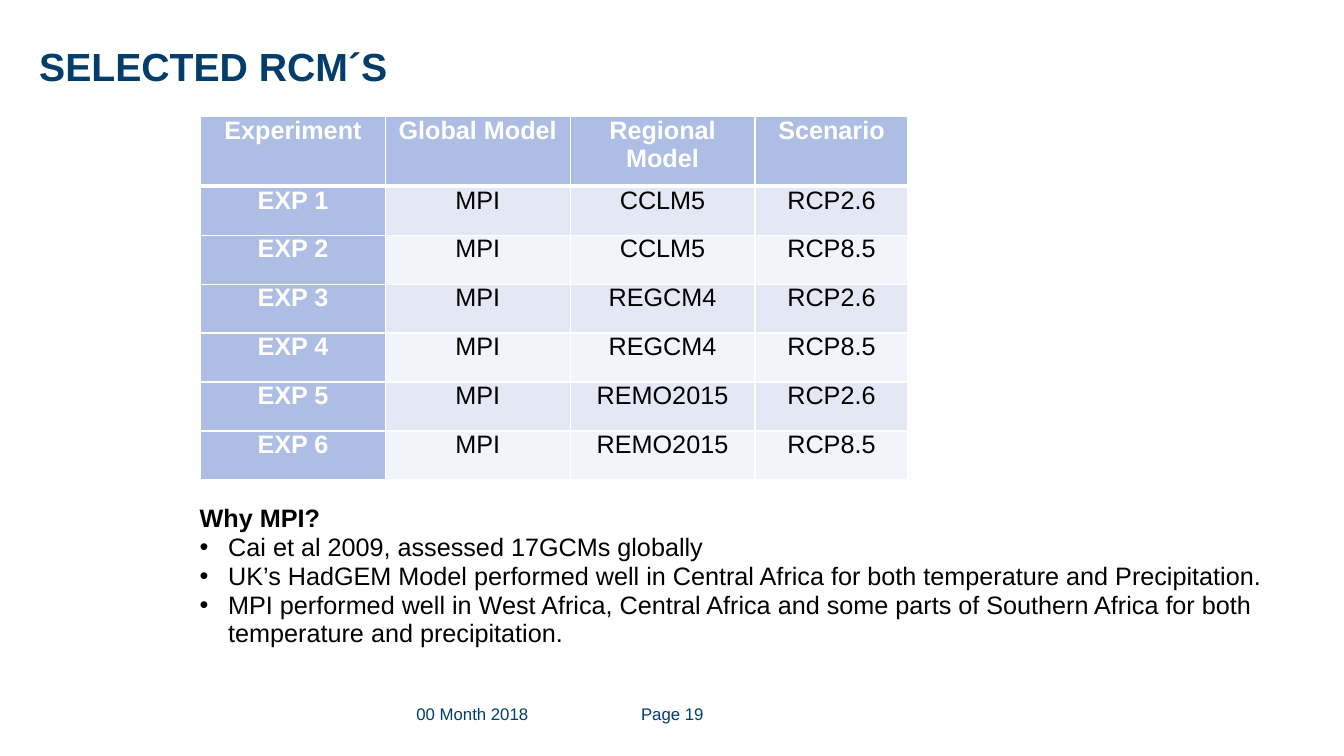
"""Build the slide of selected regional climate models."""
from dataclasses import dataclass

from lxml.etree import SubElement
from pptx import Presentation
from pptx.dml.color import RGBColor
from pptx.enum.text import MSO_ANCHOR, MSO_AUTO_SIZE, PP_ALIGN
from pptx.oxml import parse_xml
from pptx.oxml.ns import nsdecls, qn
from pptx.util import Pt


@dataclass(frozen=True)
class Theme:
    """Colours, font and type sizes."""
    font: str = "Arial"
    navy: str = "023D6B"
    black: str = "000000"
    white: str = "FFFFFF"
    head: str = "ADBDE3"
    bands: tuple = ("E3E8F4", "F1F4FA")
    big: int = 28
    text: int = 18
    small: int = 12


def write(para, text, *, size, color, font, bold=False,
          align=PP_ALIGN.LEFT, lines=None):
    """Put formatted text into a paragraph."""
    para.alignment = align
    para.space_before = para.space_after = Pt(0)
    if lines:
        para.line_spacing = lines
    run = para.add_run()
    run.text = text
    run.font.name = font
    run.font.size = Pt(size)
    run.font.bold = bold
    run.font.color.rgb = RGBColor.from_string(color)


def mark(para, indent):
    """Give a paragraph a hanging bullet, or none when indent is zero."""
    props = para._p.get_or_add_pPr()
    props.set("marL", str(Pt(indent)))
    props.set("indent", str(-Pt(indent)))
    if indent:
        SubElement(props, qn("a:buFont"), typeface="Arial")
        SubElement(props, qn("a:buChar"), char="•")
    else:
        SubElement(props, qn("a:buNone"))


def edge(cell, color, widths):
    """Draw the borders of a cell from a width per side."""
    props = cell._tc.get_or_add_tcPr()
    for spot, (side, width) in enumerate(widths.items()):
        props.insert(spot, parse_xml(
            f'<a:ln{side} {nsdecls("a")} w="{Pt(width)}"><a:solidFill>'
            f'<a:srgbClr val="{color}"/></a:solidFill></a:ln{side}>'))


class Deck:
    """Hold the style and the current slide."""

    def __init__(self, theme):
        """Open a wide deck with one title and content slide."""
        self.theme = theme
        self.file = Presentation()
        self.file.slide_width, self.file.slide_height = Pt(960), Pt(540)
        self.slide = self.file.slides.add_slide(self.file.slide_layouts[1])

    def place(self, shape, box, inset=(0, 0)):
        """Move a text shape and return its cleared frame."""
        shape.left, shape.top, shape.width, shape.height = map(Pt, box)
        frame = shape.text_frame
        frame.word_wrap = True
        frame.auto_size = MSO_AUTO_SIZE.NONE
        frame.vertical_anchor = MSO_ANCHOR.TOP
        frame.margin_left = frame.margin_right = Pt(inset[0])
        frame.margin_top = frame.margin_bottom = Pt(inset[1])
        return frame

    def title(self, text, box):
        """Fill the title."""
        frame = self.place(self.slide.shapes.title, box)
        write(frame.paragraphs[0], text, size=self.theme.big, bold=True,
              color=self.theme.navy, font=self.theme.font, lines=1.14)

    def label(self, text, box):
        """Add a small footer label."""
        shape = self.slide.shapes.add_textbox(*map(Pt, box))
        write(self.place(shape, box).paragraphs[0], text,
              size=self.theme.small, color=self.theme.navy,
              font=self.theme.font)

    def points(self, lead, items, box):
        """Fill the body with a bold lead and a bulleted list."""
        frame = self.place(self.slide.placeholders[1], box, (7.2, 3.6))
        for row, text in enumerate([lead, *items]):
            para = frame.add_paragraph() if row else frame.paragraphs[0]
            mark(para, 20.4 if row else 0)
            write(para, text, size=self.theme.text, bold=row == 0,
                  color=self.theme.black, font=self.theme.font, lines=0.95)

    def table(self, rows, spot, widths, heights):
        """Add a banded table with a header row and header column."""
        theme = self.theme
        grid = self.slide.shapes.add_table(
            len(rows), len(widths), *map(Pt, spot),
            Pt(sum(widths)), Pt(sum(heights))).table
        for col, width in zip(grid.columns, widths):
            col.width = Pt(width)
        for line, height in zip(grid.rows, heights):
            line.height = Pt(height)
        for row, values in enumerate(rows):
            for col, text in enumerate(values):
                cell = grid.cell(row, col)
                head = row == 0 or col == 0
                fill = theme.head if head else theme.bands[(row - 1) % 2]
                cell.fill.solid()
                cell.fill.fore_color.rgb = RGBColor.from_string(fill)
                cell.margin_left = cell.margin_right = Pt(4.3)
                cell.margin_top = cell.margin_bottom = Pt(0)
                edge(cell, theme.white, {"L": 1, "R": 1,
                                         "T": 3 if row == 1 else 1,
                                         "B": 1 if row else 3})
                write(cell.text_frame.paragraphs[0], text, bold=head,
                      size=theme.text, font=theme.font,
                      color=theme.white if head else theme.black,
                      align=PP_ALIGN.CENTER)


def main():
    """Compose and save the slide."""
    deck = Deck(Theme())
    deck.title("SELECTED RCM´S", (28, 25.2, 901.5, 88.5))
    deck.label("00 Month 2018", (297.4, 502.6, 126, 17.3))
    deck.label("Page 19", (457.9, 502.6, 57, 17.3))
    pairs = [(model, path) for model in ("CCLM5", "REGCM4", "REMO2015")
             for path in ("RCP2.6", "RCP8.5")]
    rows = [("Experiment", "Global Model", "Regional Model", "Scenario")]
    rows += [(f"EXP {num}", "MPI", *pair)
             for num, pair in enumerate(pairs, 1)]
    deck.table(rows, (143.3, 83), [132] * 3 + [109.4],
               [50] + [35] * len(pairs))
    deck.points("Why MPI?", [
        "Cai et al 2009, assessed 17GCMs globally",
        "UK’s HadGEM Model performed well in Central Africa for both "
        "temperature and Precipitation.",
        "MPI performed well in West Africa, Central Africa and some parts "
        "of Southern Africa for both temperature and precipitation.",
    ], (135.4, 357, 795, 111))
    deck.file.save("out.pptx")


if __name__ == "__main__":
    main()
